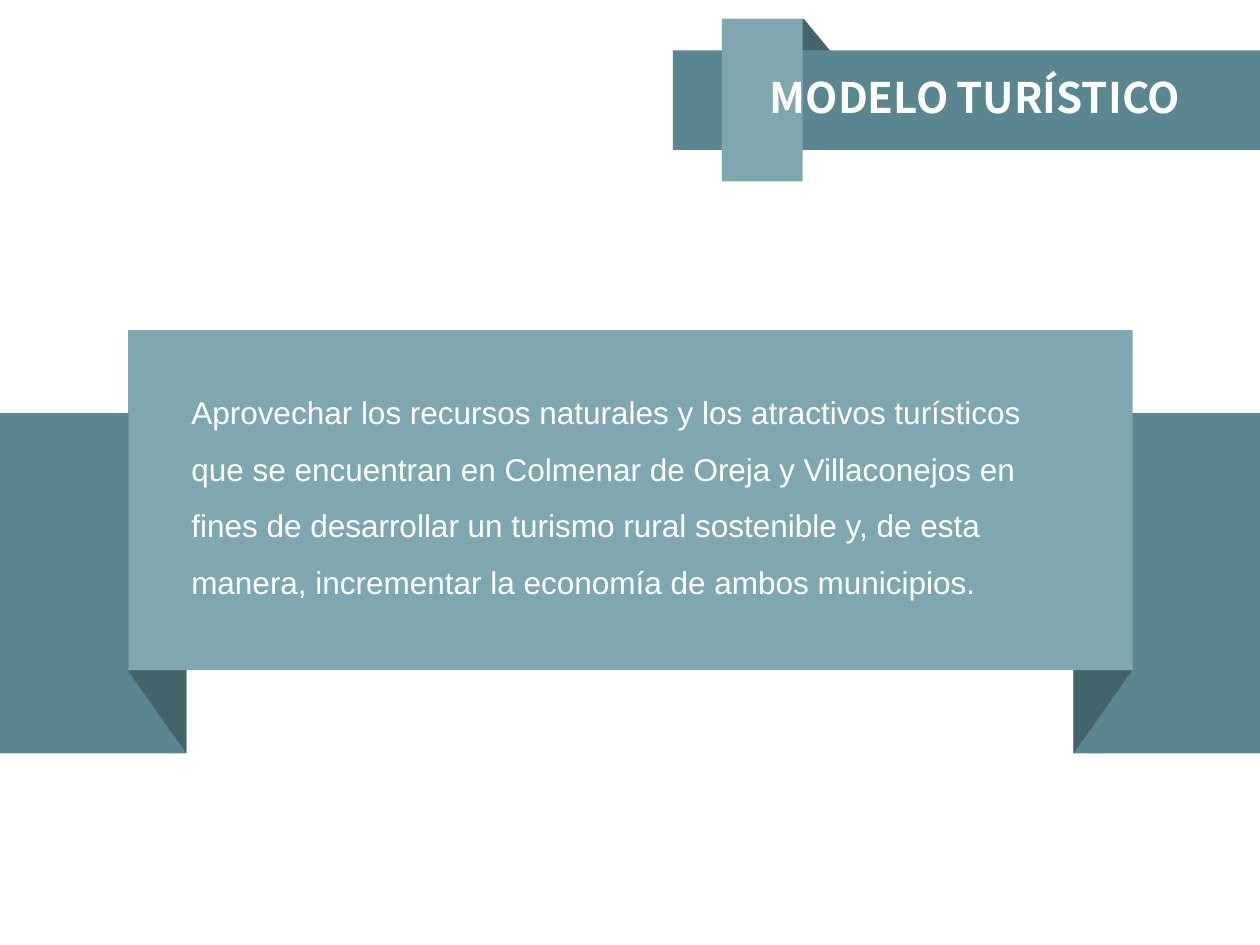
from lxml import etree
from pptx import Presentation
from pptx.dml.color import RGBColor
from pptx.enum.shapes import MSO_SHAPE
from pptx.enum.text import MSO_ANCHOR, MSO_AUTO_SIZE, PP_ALIGN
from pptx.util import Inches, Pt

RECT = MSO_SHAPE.RECTANGLE
LEFT = PP_ALIGN.LEFT
MIDDLE = MSO_ANCHOR.MIDDLE
FIXED = MSO_AUTO_SIZE.NONE
LIGHT, MID, DARK = "7FA7AF", "5A868F", "43646B"
WHITE, BLUE = "FFFFFF", "5B9BD5"
WIDE = 10
NS = "http://schemas.openxmlformats.org/drawingml/2006/main"


def paint(shape, color):
    shape.fill.solid()
    shape.fill.fore_color.rgb = RGBColor.from_string(color)
    shape.line.fill.background()
    shape.shadow.inherit = False


def draw(color, points):
    start, *rest = [(Inches(x), Inches(y)) for x, y in points]
    pen = slide.shapes.build_freeform(*start, scale=1.0)
    pen.add_line_segments(rest, close=True)
    paint(pen.convert_to_shape(), color)


deck = Presentation()
deck.slide_width, deck.slide_height = Inches(WIDE), Inches(7.5)
slide = deck.slides.add_slide(deck.slide_layouts[5])

# Title fold, then the bands of both ribbons
draw(DARK, [(5.73, 0.15), (6.38, 0.15), (7, 0.9)])
bands = [
    (MID, 5.34, 0.4, 4.66, 0.79),
    (LIGHT, 5.73, 0.15, 0.64, 1.29),
    (MID, 0, 3.28, 1.48, 2.7),
    (MID, 8.52, 3.28, 1.48, 2.7),
]
for color, *box in bands:
    paint(slide.shapes.add_shape(RECT, *map(Inches, box)), color)

# Mirrored folds behind the centre panel
fold = [(1.02, 2.62), (1.48, 3.03), (1.48, 5.98), (1.02, 5.33)]
draw(DARK, fold)
draw(DARK, [(WIDE - x, y) for x, y in fold])
panel = slide.shapes.add_shape(
    RECT, Inches(1.02), Inches(2.62), Inches(7.97), Inches(2.7))
paint(panel, LIGHT)

# Body text
body = slide.shapes.add_textbox(
    Inches(1.42), Inches(2.92), Inches(7.1), Inches(1.92))
body.text_frame.word_wrap = True
para = body.text_frame.paragraphs[0]
para.text = (
    "Aprovechar los recursos naturales y los atractivos turísticos que se "
    "encuentran en Colmenar de Oreja y Villaconejos en fines de desarrollar "
    "un turismo rural sostenible y, de esta manera, incrementar la economía "
    "de ambos municipios.")
para.line_spacing = 1.5
para.font.name = "Arial"
para.font.size = Pt(18)
para.font.color.rgb = RGBColor.from_string(WHITE)

# Title, brought in front of its ribbon
title = slide.shapes.title
title.left, title.top = Inches(6.05), Inches(0.54)
title.width, title.height = Inches(3.95), Inches(0.46)
slide.shapes._spTree.append(title._element)
frame = title.text_frame
frame.auto_size = FIXED
frame.word_wrap = True
frame.vertical_anchor = MIDDLE
frame.margin_left = frame.margin_right = Inches(0.06)
frame.margin_top = frame.margin_bottom = Inches(0.03)
para = frame.paragraphs[0]
para.alignment = LEFT
run = para.add_run()
run.text = "MODELO TURÍSTICO"
run.font.name = "Noto Sans CJK SC"
run.font.size = Pt(24)
run.font.bold = True
run.font.color.rgb = RGBColor.from_string("FEFEFE")

# Small caps, outline and soft shadow of the title letters
props = run.font._element
props.set("cap", "small")
tint = f'<a:srgbClr val="{BLUE}"/>'
props.insert(0, etree.fromstring(
    f'<a:ln xmlns:a="{NS}" w="{Pt(0.75)}"><a:solidFill>{tint}'
    '</a:solidFill></a:ln>'))
props.insert(2, etree.fromstring(
    f'<a:effectLst xmlns:a="{NS}"><a:outerShdw dist="{Pt(2)}" dir="2700000">'
    f'{tint}</a:outerShdw></a:effectLst>'))

deck.save("out.pptx")
